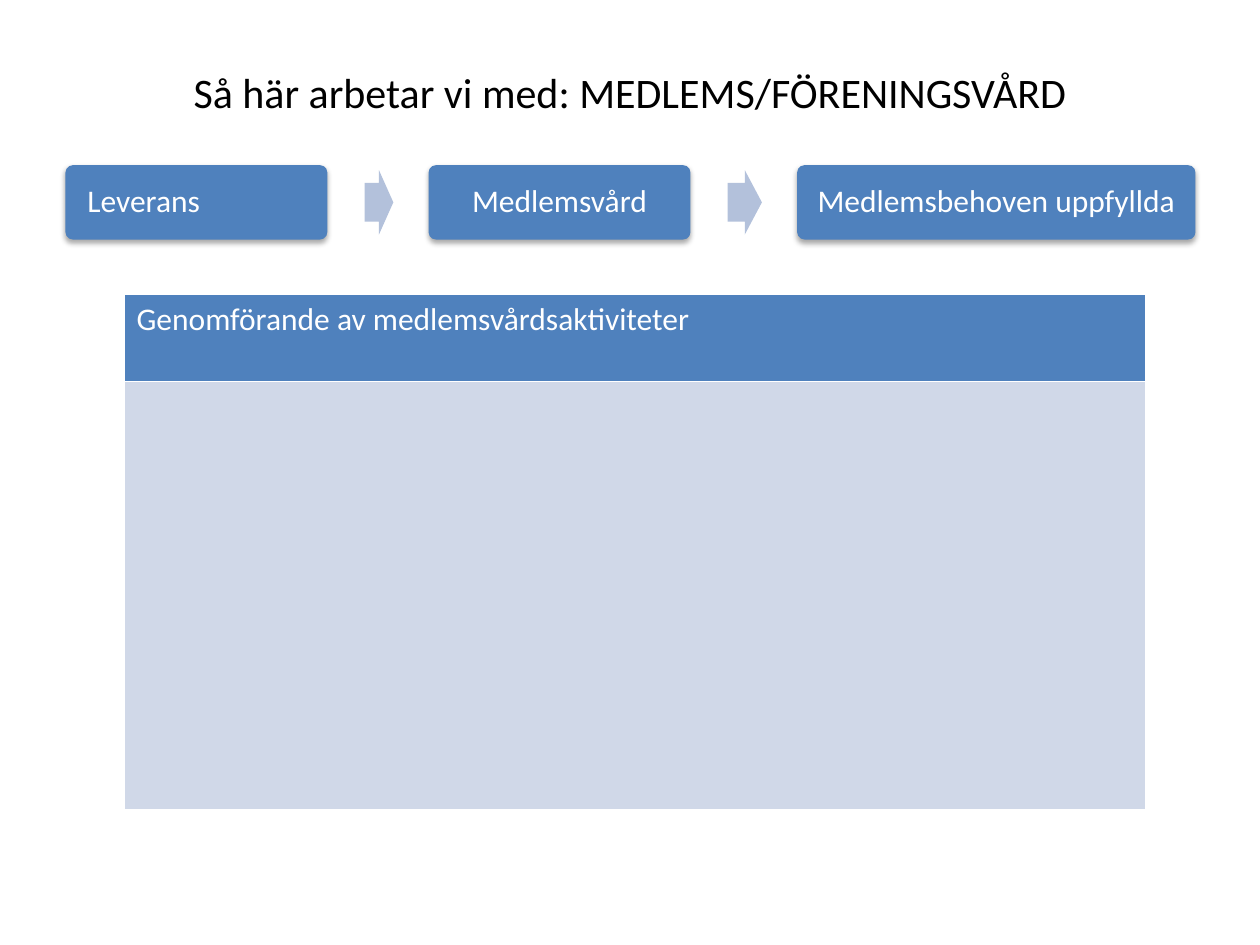
import pptx
import pptx.util
import pptx.oxml
import pptx.oxml.ns
import pptx.dml.color
import pptx.enum.shapes
import pptx.enum.text

Cm = pptx.util.Cm
Pt = pptx.util.Pt
Kind = pptx.enum.shapes.MSO_SHAPE
Align = pptx.enum.text.PP_ALIGN
Anchor = pptx.enum.text.MSO_ANCHOR

HUES = {"ink": "000000", "blue": "4F81BD", "arrow": "B3C1DB",
        "pale": "D0D8E8", "white": "FFFFFF"}
SPACE = pptx.oxml.ns.nsdecls("a")


def hue(name):
    return pptx.dml.color.RGBColor.from_string(HUES[name])


def paint(item, name):
    item.fill.solid()
    item.fill.fore_color.rgb = hue(name)


def style(para, size, color, align):
    para.font.name = "Calibri"
    para.font.size = Pt(size)
    para.font.color.rgb = hue(color)
    para.alignment = align


def add_shape(slide, kind, box, color, *adjust):
    shape = slide.shapes.add_shape(kind, *map(Cm, box))
    shape.shadow.inherit = False
    paint(shape, color)
    shape.line.fill.background()
    for i, value in enumerate(adjust):
        shape.adjustments[i] = value
    return shape


def add_shadow(shape):
    effects = shape._element.spPr.find(pptx.oxml.ns.qn("a:effectLst"))
    effects.append(pptx.oxml.parse_xml(
        f'<a:outerShdw {SPACE} blurRad="40000" dist="23000" dir="5400000" '
        'rotWithShape="0"><a:srgbClr val="000000"><a:alpha val="35000"/>'
        '</a:srgbClr></a:outerShdw>'))


def add_title(slide, box, text):
    frame = slide.shapes.add_textbox(*map(Cm, box)).text_frame
    frame.word_wrap = True
    frame.vertical_anchor = Anchor.MIDDLE
    frame.text = text
    style(frame.paragraphs[0], 24, "ink", Align.CENTER)


def add_step(slide, box, text, align):
    shape = add_shape(slide, Kind.ROUNDED_RECTANGLE, box, "blue", 0.1)
    add_shadow(shape)
    frame = shape.text_frame
    frame.word_wrap = True
    frame.vertical_anchor = Anchor.MIDDLE
    frame.margin_left = frame.margin_right = Cm(0.4 if align == Align.LEFT else 0.2)
    frame.margin_top = frame.margin_bottom = Cm(0.18)
    frame.text = text
    para = frame.paragraphs[0]
    para.line_spacing = 0.9
    style(para, 18, "white", align)


def add_flow(slide, box):
    left, top, _, high = box
    steps = [("Leverans", 5.28, Align.LEFT, 0.58),
             ("Medlemsvård", 5.28, Align.CENTER, 0.69),
             ("Medlemsbehoven uppfyllda", 8.03, Align.CENTER, None)]
    for text, wide, align, arrow in steps:
        add_step(slide, (left, top, wide, high), text, align)
        if arrow:
            left += wide + 0.75
            add_shape(slide, Kind.RIGHT_ARROW,
                      (left, top + 0.1, arrow, high - 0.2), "arrow", 0.6, 0.5)
            left += arrow + 0.71


def add_edges(cell):
    props = cell._tc.get_or_add_tcPr()
    for i, side in enumerate(("lnL", "lnR", "lnT", "lnB")):
        props.insert(i, pptx.oxml.parse_xml(
            f'<a:{side} {SPACE} w="12700"><a:solidFill>'
            f'<a:srgbClr val="{HUES["white"]}"/></a:solidFill></a:{side}>'))


def add_grid(slide, box, text):
    table = slide.shapes.add_table(2, 1, *map(Cm, box)).table
    head = 1.76
    for row, high in zip(table.rows, (head, box[3] - head)):
        row.height = Cm(high)
    for cell, color in zip(table.iter_cells(), ("blue", "pale")):
        paint(cell, color)
        add_edges(cell)
    cell = table.cell(0, 0)
    cell.text = text
    para = cell.text_frame.paragraphs[0]
    style(para, 18, "white", Align.LEFT)
    para.font.bold = False


def main():
    deck = pptx.Presentation()
    deck.slide_width = Cm(25.4)
    deck.slide_height = Cm(19.05)
    slide = deck.slides.add_slide(deck.slide_layouts[6])
    add_title(slide, (1.27, 0.76, 22.86, 2.16),
              "Så här arbetar vi med: MEDLEMS/FÖRENINGSVÅRD")
    add_flow(slide, (1.32, 3.33, 22.78, 1.5))
    add_grid(slide, (2.5, 5.93, 20.6, 10.39),
             "Genomförande av medlemsvårdsaktiviteter")
    deck.save("out.pptx")


if __name__ == "__main__":
    main()
